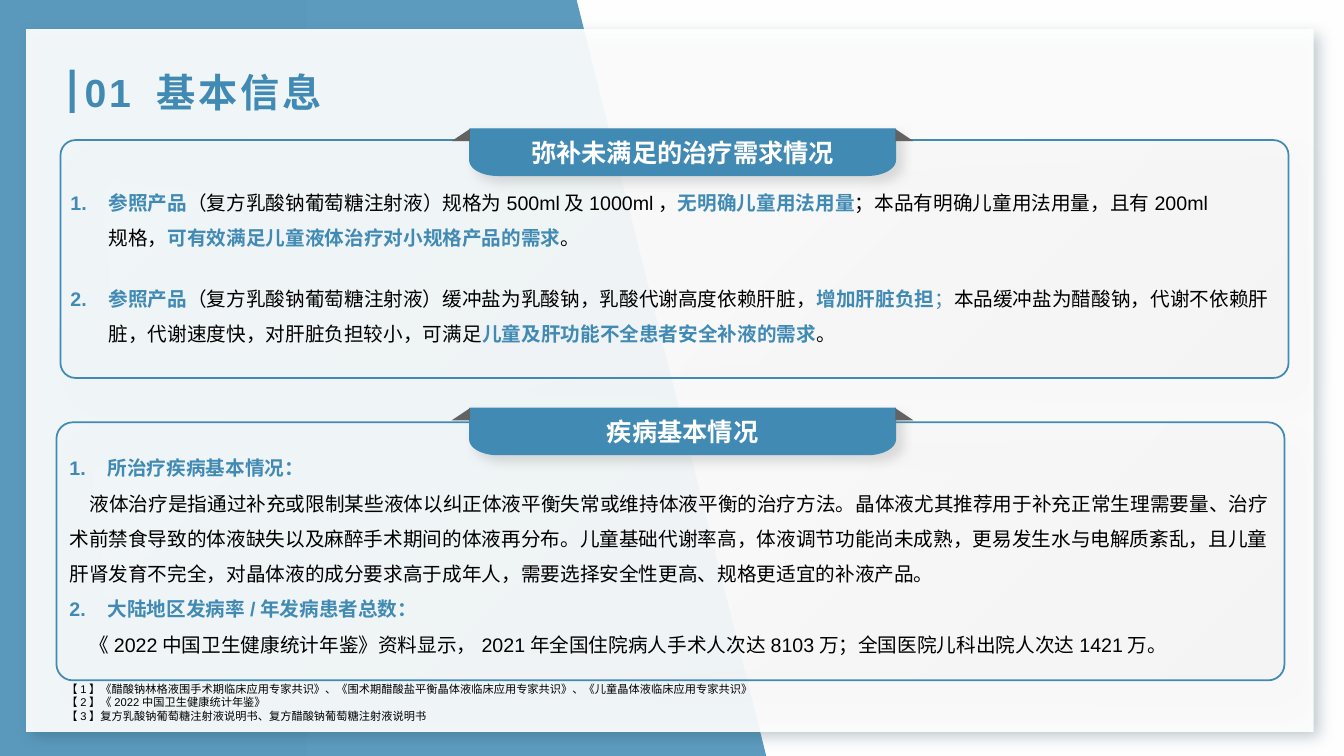
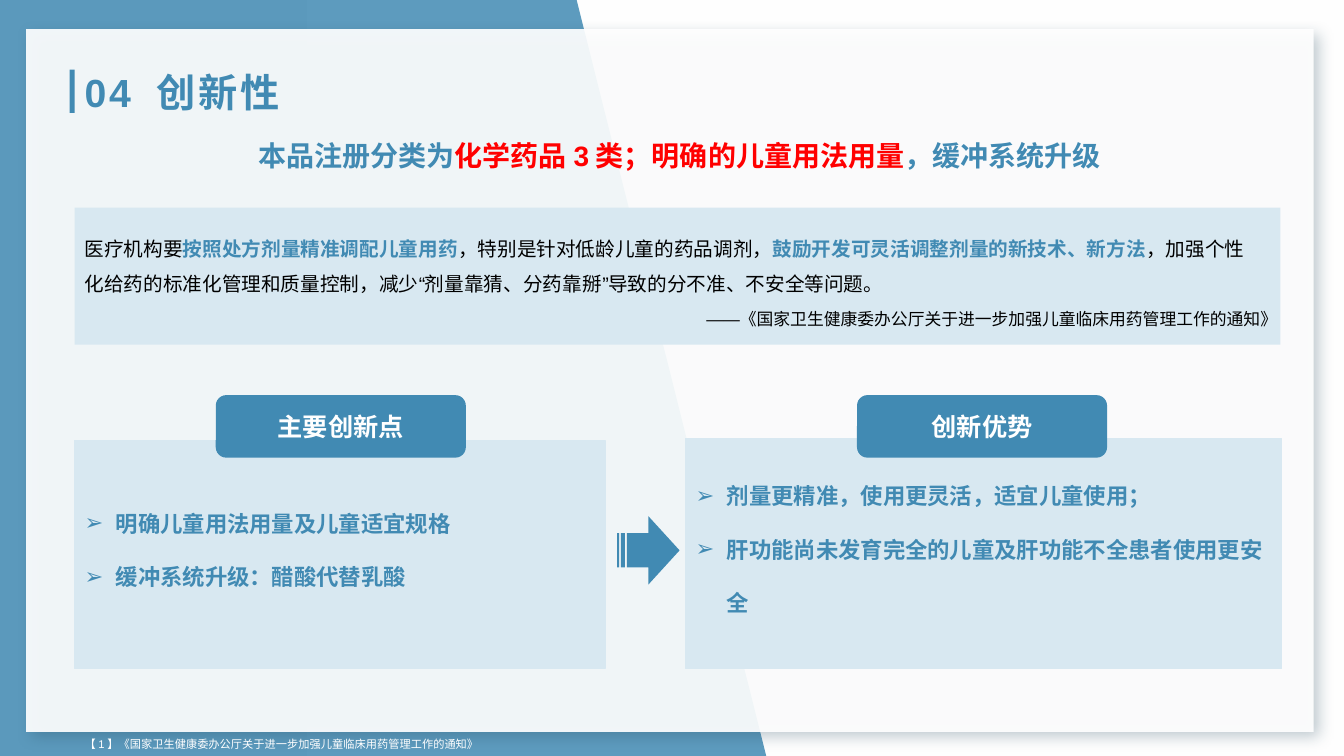
import math
from pptx import Presentation, util as u, oxml as ox
from pptx.dml import color as col
from pptx.enum import lang, shapes, text as tx
from pptx.oxml import ns

HUE = {"blue": "418AB3", "pale": "D8E8F1", "white": "FFFFFF", "black": "000000", "red": "FF0000",
       "grey": "626262", "page": "F0F0F0", "navy": "20455A", "mist": "838383", "ash": "E6E6E6"}
FONT = {
    "title": ("blue", {"size": 28, "bold": True}),
    "head": ("blue", {"size": 20, "bold": True}),
    "alert": ("red", {"size": 20, "bold": True}),
    "label": ("white", {"size": 18, "bold": True}),
    "point": ("blue", {"size": 16, "bold": True}),
    "key": ("blue", {"size": 14, "bold": True}),
    "soft": ("blue", {"size": 14, "bold": False}),
    "body": ("black", {"size": 14, "bold": False}),
    "cite": ("black", {"size": 12}),
    "note": ("black", {"size": 8}),
    "foot": ("white", {"size": 8}),
}
KIND = shapes.MSO_SHAPE
MID = tx.MSO_ANCHOR.MIDDLE
LEFT, MIDST, RIGHT = tx.PP_ALIGN.LEFT, tx.PP_ALIGN.CENTER, tx.PP_ALIGN.RIGHT
DEEP = ("navy", 30, 10, 6)
DIM = ("mist", 25, 8, 6)
WIDE = ("mist", 8, 22, 18)


def node(tag, body="", **atts):
    pairs = "".join(f' {key}="{val}"' for key, val in atts.items())
    return ox.parse_xml(f'<a:{tag} {ns.nsdecls("a")}{pairs}>{body}</a:{tag}>')


class Deck:
    """Hold the shared style and the current slide."""

    def __init__(self):
        self.prs = Presentation()
        self.prs.slide_width, self.prs.slide_height = u.Inches(13.33), u.Inches(7.5)

    def page(self, title):
        self.slide = self.prs.slides.add_slide(self.prs.slide_layouts[6])
        back = self.slide.background.fill
        back.solid()
        back.fore_color.rgb = col.RGBColor.from_string(HUE["page"])
        self.shape(KIND.RECTANGLE, (3.04, 0, 10.29, 7.5), "white", alpha=95)
        self.free([(0, 0), (5.72, 0), (7.6, 7.5), (0, 7.5)], "blue", alpha=85)
        self.shape(KIND.RECTANGLE, (0.26, 0.29, 12.77, 6.97), "white", alpha=92, shade=DEEP)
        self.shape(KIND.RECTANGLE, (0.69, 0.69, 0.05, 0.43), "blue")
        run = self.text((0.74, 0.62, 5.26, 0.58), [{"runs": [("title", title)]}], MID)
        run._r.get_or_add_rPr().set("spc", "200")

    def paint(self, shape, fill, line=None, alpha=None, shade=None, width=1):
        shape.shadow.inherit = False
        shape.fill.solid()
        shape.fill.fore_color.rgb = col.RGBColor.from_string(HUE[fill])
        if alpha:
            tint = shape._element.spPr.find(".//" + ns.qn("a:srgbClr"))
            tint.append(node("alpha", val=alpha * 1000))
        if line:
            shape.line.color.rgb = col.RGBColor.from_string(HUE[line])
            shape.line.width = u.Pt(width)
        else:
            shape.line.fill.background()
        if shade:
            hue, part, blur, dist = shade
            tint = f'<a:srgbClr val="{HUE[hue]}"><a:alpha val="{part * 1000}"/></a:srgbClr>'
            shape._element.spPr.find(ns.qn("a:effectLst")).append(
                node("outerShdw", tint, blurRad=u.Pt(blur), dist=u.Pt(dist),
                     dir=45 * 60000, algn="tl", rotWithShape=0))
        return shape

    def shape(self, kind, box, fill, adj=None, **look):
        shape = self.slide.shapes.add_shape(kind, *map(u.Inches, box))
        if adj is not None:
            shape.adjustments[0] = adj
        return self.paint(shape, fill, **look)

    def free(self, dots, fill, **look):
        dots = [(u.Inches(x), u.Inches(y)) for x, y in dots]
        form = self.slide.shapes.build_freeform(*dots[0], scale=1.0)
        form.add_line_segments(dots[1:], close=True)
        return self.paint(form.convert_to_shape(), fill, **look)

    def frame(self, box):
        shape = self.shape(KIND.ROUNDED_RECTANGLE, box, "white", adj=0.063,
                           line="blue", width=1.25, shade=WIDE)
        stops = "".join(f'<a:gs pos="{pos}"><a:srgbClr val="{HUE[hue]}"><a:alpha val="{part}"/></a:srgbClr></a:gs>'
                        for pos, hue, part in ((0, "ash", 20000), (100000, "white", 0)))
        props = shape._element.spPr
        props.replace(props.find(ns.qn("a:solidFill")), node(
            "gradFill", f'<a:gsLst>{stops}</a:gsLst><a:path path="circle">'
            '<a:fillToRect l="100000" t="100000"/></a:path>', rotWithShape=1))

    def ribbon(self, top, label):
        left, right, low = 4.66, 8.88, top + 0.46
        wide, tall, steps = 0.28, 0.15, 12
        turns = [math.pi / 2 * i / steps for i in range(steps + 1)]
        arc = [(wide * (1 - math.cos(t)), low - tall * (1 - math.sin(t))) for t in turns]
        dots = [(left, top), (right, top)] + [(right - x, y) for x, y in arc]
        dots += [(left + x, y) for x, y in reversed(arc)]
        band = self.free(dots, "blue", line="blue", shade=DIM)
        self.put(band, [{"runs": [("label", label)], "align": MIDST}], MID)
        for x, adj in ((left - 0.18, 1), (right, 0)):
            self.shape(KIND.ISOSCELES_TRIANGLE, (x, top, 0.18, 0.12), "grey", adj=adj)

    def button(self, box, label):
        shape = self.shape(KIND.ROUNDED_RECTANGLE, box, "blue")
        self.put(shape, [{"runs": [("label", label)], "align": MIDST}], MID)

    def panel(self, box, points):
        shape = self.shape(KIND.RECTANGLE, box, "pale", line="pale")
        self.put(shape, [{"runs": [("point", point)], "bullet": "➢", "hang": 0.31, "space": 2}
                         for point in points], MID)
        shape.text_frame.margin_bottom = u.Inches(0.4)

    def text(self, box, paras, anchor=tx.MSO_ANCHOR.TOP):
        return self.put(self.slide.shapes.add_textbox(*map(u.Inches, box)), paras, anchor)

    def put(self, shape, paras, anchor):
        frame = shape.text_frame
        frame.word_wrap, frame.vertical_anchor = True, anchor
        for i, plan in enumerate(paras):
            para = frame.add_paragraph() if i else frame.paragraphs[0]
            props = para._p.get_or_add_pPr()
            if "hang" in plan:
                props.set("marL", str(u.Inches(plan["hang"])))
                props.set("indent", str(-u.Inches(plan["hang"])))
            if "first" in plan:
                props.set("indent", str(u.Inches(plan["first"])))
            if "num" in plan:
                props.append(node("buFont", typeface="+mj-lt"))
                props.append(node("buAutoNum", type="arabicPeriod", startAt=plan["num"]))
            if "bullet" in plan:
                props.append(node("buFont", typeface="Arial"))
                props.append(node("buChar", char=plan["bullet"]))
            para.alignment = plan.get("align", LEFT)
            para.line_spacing = plan.get("space", 1.0)
            for style, words in plan["runs"]:
                run = para.add_run()
                run.text = words
                hue, form = FONT[style]
                form = {**form, "size": u.Pt(form["size"]), "name": "Arial",
                        "language_id": lang.MSO_LANGUAGE_ID.SIMPLIFIED_CHINESE}
                for key, val in form.items():
                    setattr(run.font, key, val)
                run.font.color.rgb = col.RGBColor.from_string(HUE[hue])
                run._r.get_or_add_rPr().append(node("ea", typeface="Arial"))
        return run


def item(num, *runs):
    return {"runs": runs, "num": num, "hang": 0.38, "space": 1.5}


def prose(words):
    return {"runs": [("body", words)], "first": 0.2, "space": 1.5}


def basics(deck):
    deck.page("01 基本信息")
    deck.frame((0.6, 1.39, 12.18, 2.36))
    deck.ribbon(1.28, "弥补未满足的治疗需求情况")
    deck.text((0.6, 1.64, 11.71, 0.97), [item(
        1, ("key", "参照产品"), ("body", "（复方乳酸钠葡萄糖注射液）规格为500ml及1000ml，"),
        ("key", "无明确儿童用法用量"), ("body", "；本品有明确儿童用法用量，且有200ml规格，"),
        ("key", "可有效满足儿童液体治疗对小规格产品的需求"), ("body", "。"))], MID)
    deck.text((0.6, 2.42, 12.16, 1.31), [item(
        2, ("key", "参照产品"), ("body", "（复方乳酸钠葡萄糖注射液）缓冲盐为乳酸钠，乳酸代谢高度依赖肝脏，"),
        ("key", "增加肝脏负担"), ("soft", "；"),
        ("body", "本品缓冲盐为醋酸钠，代谢不依赖肝脏，代谢速度快，对肝脏负担较小，可满足"),
        ("key", "儿童及肝功能不全患者安全补液的需求"), ("body", "。"))], MID)
    deck.frame((0.56, 4.19, 12.18, 2.56))
    deck.ribbon(4.05, "疾病基本情况")
    deck.text((0.59, 4.81, 12.16, 1.3), [
        item(1, ("key", "所治疗疾病基本情况：")),
        prose("液体治疗是指通过补充或限制某些液体以纠正体液平衡失常或维持体液平衡的治疗方法。"
              "晶体液尤其推荐用于补充正常生理需要量、治疗术前禁食导致的体液缺失以及麻醉手术期间的体液再分布。"
              "儿童基础代谢率高，体液调节功能尚未成熟，更易发生水与电解质紊乱，且儿童肝肾发育不完全，"
              "对晶体液的成分要求高于成年人，需要选择安全性更高、规格更适宜的补液产品。"),
        item(2, ("key", "大陆地区发病率/年发病患者总数：")),
        prose("《2022中国卫生健康统计年鉴》资料显示，2021年全国住院病人手术人次达8103万；"
              "全国医院儿科出院人次达1421万。")], MID)
    deck.text((0.56, 6.72, 7.08, 0.5), [{"runs": [("note", line)]} for line in (
        "【1】《醋酸钠林格液围手术期临床应用专家共识》、《围术期醋酸盐平衡晶体液临床应用专家共识》、《儿童晶体液临床应用专家共识》",
        "【2】《2022中国卫生健康统计年鉴》",
        "【3】复方乳酸钠葡萄糖注射液说明书、复方醋酸钠葡萄糖注射液说明书")])


def novelty(deck):
    notice = "《国家卫生健康委办公厅关于进一步加强儿童临床用药管理工作的通知》"
    deck.page("04 创新性")
    deck.text((0.74, 1.33, 12, 0.44), [{"align": MIDST, "runs": [
        ("head", "本品注册分类为"), ("alert", "化学药品3类；明确的儿童用法用量"), ("head", "，缓冲系统升级")]}])
    deck.shape(KIND.RECTANGLE, (0.74, 2.06, 11.96, 1.36), "pale")
    deck.text((0.74, 2.18, 11.71, 0.77), [{"space": 1.5, "runs": [
        ("body", "医疗机构要"), ("key", "按照处方剂量精准调配儿童用药"),
        ("body", "，特别是针对低龄儿童的药品调剂，"), ("key", "鼓励开发可灵活调整剂量的新技术、新方法"),
        ("body", "，加强个性化给药的标准化管理和质量控制，减少“剂量靠猜、分药靠掰”导致的分不准、不安全等问题。")]}])
    deck.text((6.1, 3.01, 6.67, 0.3), [{"align": RIGHT, "runs": [("cite", "——" + notice)]}])
    deck.panel((0.74, 4.37, 5.26, 2.26), ["明确儿童用法用量及儿童适宜规格", "缓冲系统升级：醋酸代替乳酸"])
    deck.button((2.14, 3.92, 2.48, 0.62), "主要创新点")
    deck.panel((6.8, 4.35, 5.91, 2.28), ["剂量更精准，使用更灵活，适宜儿童使用；",
                                         "肝功能尚未发育完全的儿童及肝功能不全患者使用更安全"])
    deck.button((8.5, 3.92, 2.48, 0.62), "创新优势")
    deck.shape(KIND.STRIPED_RIGHT_ARROW, (6.12, 5.12, 0.62, 0.68), "blue")
    deck.text((0.74, 7.27, 6.67, 0.23), [{"runs": [("foot", "【1】" + notice)]}])


def main():
    deck = Deck()
    basics(deck)
    novelty(deck)
    deck.prs.save("out.pptx")


if __name__ == "__main__":
    main()
